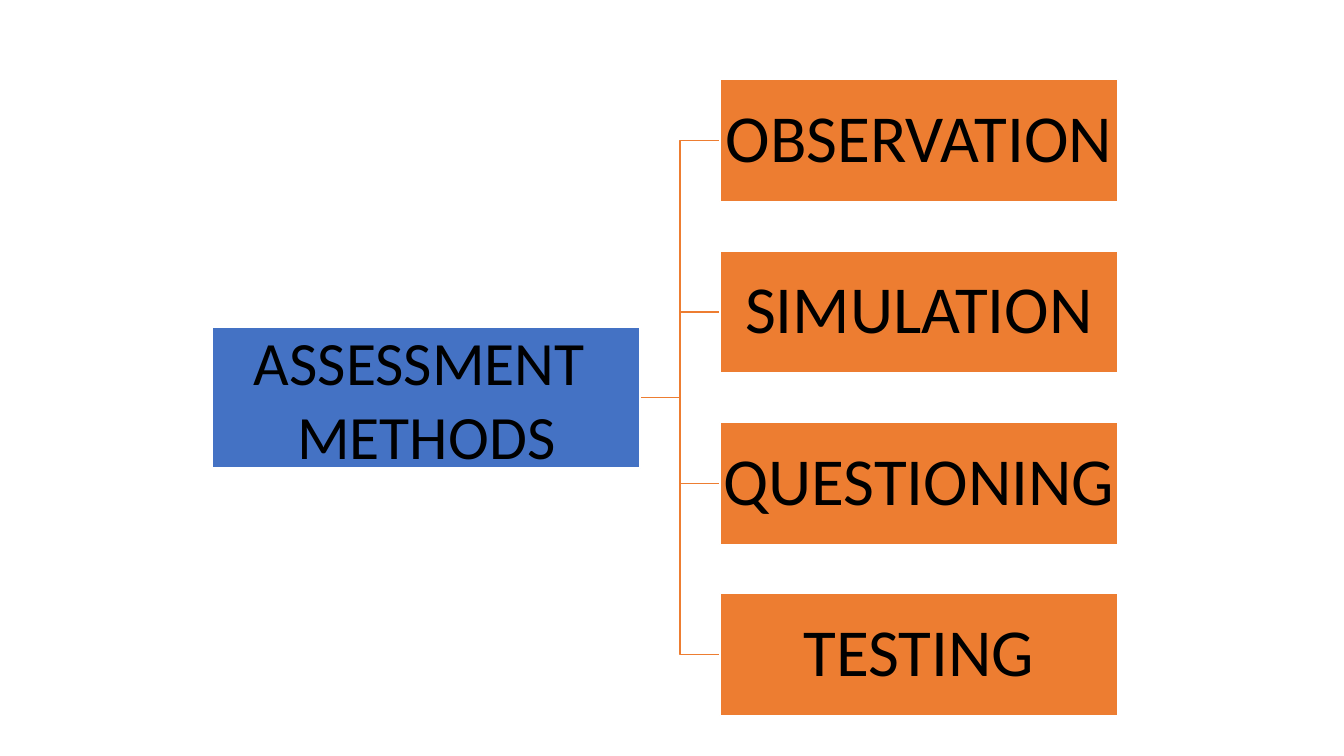
import pptx
import pptx.util
import pptx.dml.color
import pptx.enum.shapes
import pptx.enum.text
from dataclasses import dataclass

Inches = pptx.util.Inches
Pt = pptx.util.Pt
RGB = pptx.dml.color.RGBColor


@dataclass(frozen=True)
class Theme:
    font: str = "Calibri"
    root: RGB = RGB(0x44, 0x72, 0xC4)
    leaf: RGB = RGB(0xED, 0x7D, 0x31)
    edge: RGB = RGB(0xFF, 0xFF, 0xFF)
    ink: RGB = RGB(0, 0, 0)
    root_size: int = 44
    leaf_size: int = 48
    line: int = 1


class Chart:
    def __init__(self, slide, theme):
        self.slide = slide
        self.theme = theme

    def box(self, left, top, width, height, lines, fill, size, space=1.0):
        shape = self.slide.shapes.add_shape(
            pptx.enum.shapes.MSO_SHAPE.RECTANGLE,
            Inches(left), Inches(top), Inches(width), Inches(height))
        shape.shadow.inherit = False
        shape.fill.solid()
        shape.fill.fore_color.rgb = fill
        shape.line.color.rgb = self.theme.edge
        shape.line.width = Pt(self.theme.line)

        frame = shape.text_frame
        frame.word_wrap = True
        frame.vertical_anchor = pptx.enum.text.MSO_ANCHOR.MIDDLE
        frame.margin_left = frame.margin_right = Inches(0.03)
        frame.margin_top = frame.margin_bottom = Inches(0.03)
        para = frame.paragraphs[0]
        para.alignment = pptx.enum.text.PP_ALIGN.CENTER
        para.line_spacing = space
        for i, text in enumerate(lines):
            if i:
                para.add_line_break()
            run = para.add_run()
            run.text = text
            run.font.name = self.theme.font
            run.font.size = Pt(size)
            run.font.color.rgb = self.theme.ink

    def branch(self, x1, y1, x2, y2):
        """Draw an elbow line that turns halfway between the two ends."""
        mid = (x1 + x2) / 2
        pen = self.slide.shapes.build_freeform(Inches(x1), Inches(y1))
        bends = [(mid, y1), (mid, y2), (x2, y2)]
        pen.add_line_segments(
            [(Inches(x), Inches(y)) for x, y in bends], close=False)
        shape = pen.convert_to_shape()
        shape.shadow.inherit = False
        shape.fill.background()
        shape.line.color.rgb = self.theme.leaf
        shape.line.width = Pt(self.theme.line)


def main():
    deck = pptx.Presentation()
    deck.slide_width = Inches(13.33)
    deck.slide_height = Inches(7.5)
    theme = Theme()
    chart = Chart(deck.slides.add_slide(deck.slide_layouts[6]), theme)

    methods = ["OBSERVATION", "SIMULATION", "QUESTIONING", "TESTING"]
    root_left, root_wide, root_high = 2.11, 4.24, 1.4
    leaf_left, leaf_wide, leaf_high = 7.14, 3.95, 1.21
    first, step = 0.79, 1.7
    tops = [first + i * step for i in range(len(methods))]
    middle = (tops[0] + tops[-1] + leaf_high) / 2

    for top in reversed(tops):
        chart.branch(root_left + root_wide, middle,
                     leaf_left, top + leaf_high / 2)
    chart.box(root_left, middle - root_high / 2, root_wide, root_high,
              ["ASSESSMENT ", "METHODS"], theme.root, theme.root_size)
    for top, name in zip(tops, methods):
        chart.box(leaf_left, top, leaf_wide, leaf_high,
                  [name], theme.leaf, theme.leaf_size, space=0.9)

    deck.save("out.pptx")


if __name__ == "__main__":
    main()
